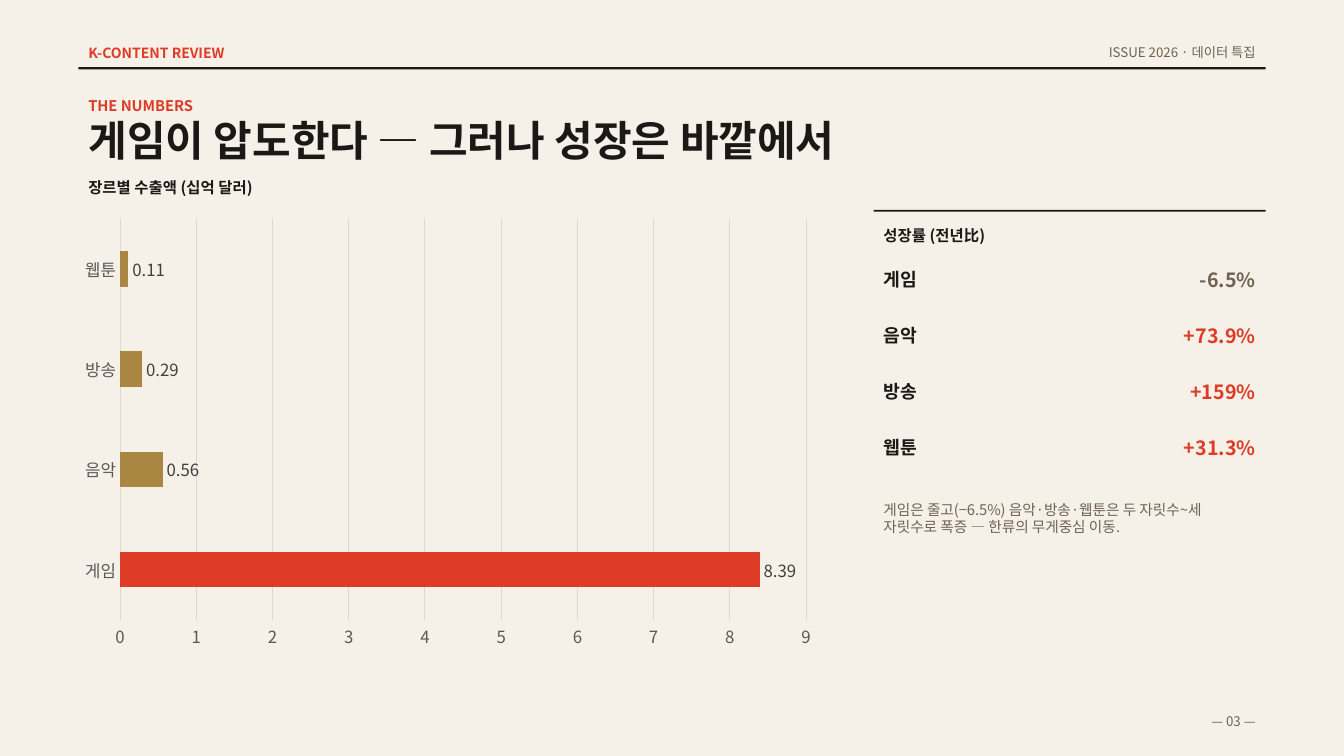
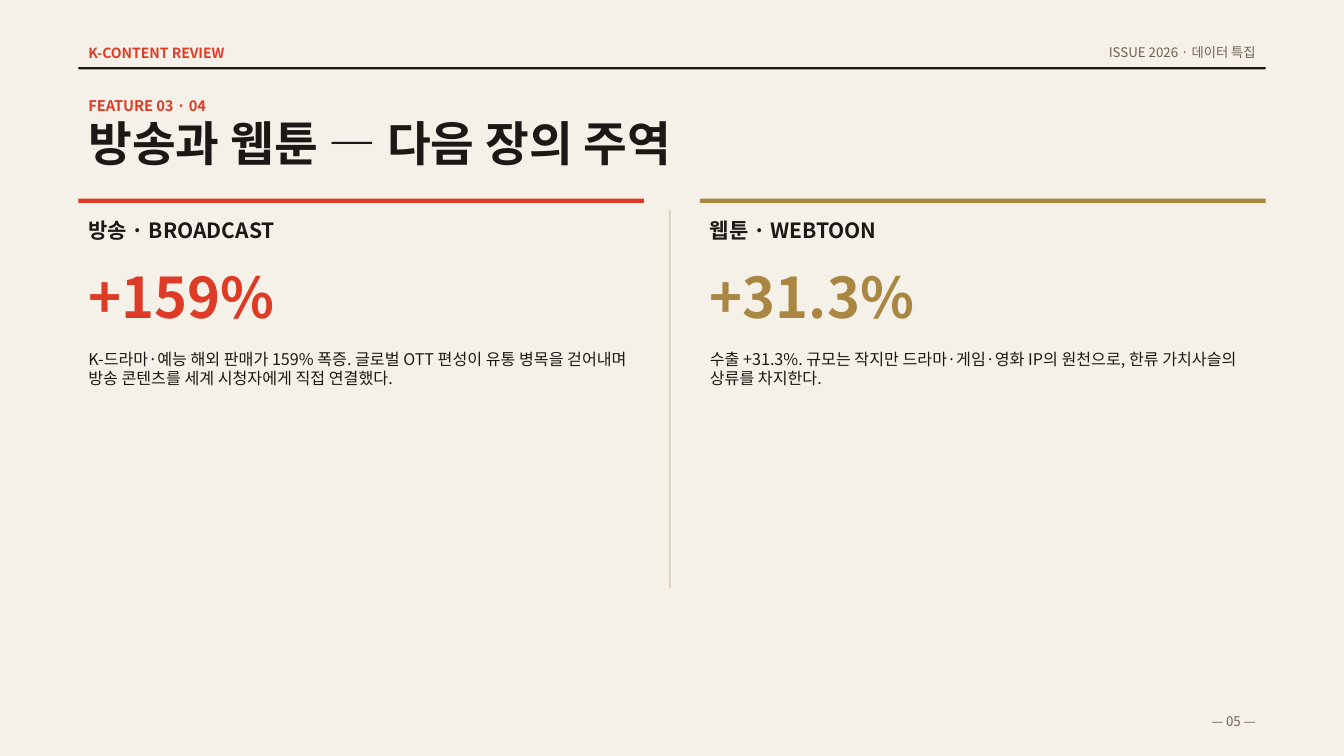
from dataclasses import dataclass

from pptx import Presentation
from pptx.chart.data import CategoryChartData
from pptx.dml.color import RGBColor
from pptx.enum import chart as charts, shapes, text
from pptx.oxml import ns
from pptx.util import Pt


@dataclass(frozen=True)
class Theme:
    """Colours, font and type sizes of the deck."""
    font: str = "Noto Sans CJK KR"
    paper: str = "F6F1E8"
    ink: str = "1C1815"
    red: str = "DE3B26"
    gold: str = "A98742"
    muted: str = "6F6253"
    divider: str = "D6CCBA"
    grid: str = "D9D9D9"
    axis: str = "595959"
    value: str = "404040"
    folio: float = 9.5
    brand: float = 10
    note: float = 10.5
    label: float = 11
    body: float = 11.5
    tick: float = 12
    genre: float = 13
    rate: float = 14
    heading: float = 15
    figure: float = 40


THEME = Theme()
LEFT, RIGHT = 56, 904
WIDTH = RIGHT - LEFT

BRAND = "K-CONTENT REVIEW"
ISSUE = "ISSUE 2026 · 데이터 특집"

NUMBERS = {
    "folio": "— 03 —",
    "kicker": ("THE NUMBERS", 90),
    "title": ("게임이 압도한다 — 그러나 성장은 바깥에서", 30, 44),
    "chart_label": "장르별 수출액 (십억 달러)",
    "exports": [("게임", 8.39, THEME.red), ("음악", 0.56, THEME.gold),
                ("방송", 0.29, THEME.gold), ("웹툰", 0.11, THEME.gold)],
    "growth_label": "성장률 (전년比)",
    "growth": [("게임", "-6.5%", THEME.muted, 56), ("음악", "+73.9%", THEME.red, 67),
               ("방송", "+159%", THEME.red, 63), ("웹툰", "+31.3%", THEME.red, 67)],
    "note": "게임은 줄고(−6.5%) 음악·방송·웹툰은 두 자릿수~세 자릿수로 폭증 — 한류의 무게중심 이동.",
}

FEATURES = {
    "folio": "— 05 —",
    "kicker": ("FEATURE 03 · 04", 98.5),
    "title": ("방송과 웹툰 — 다음 장의 주역", 34, 48),
    "columns": [
        ("방송 · BROADCAST", "+159%", 152.5, THEME.red,
         "K-드라마·예능 해외 판매가 159% 폭증. 글로벌 OTT 편성이 유통 병목을 "
         "걷어내며 방송 콘텐츠를 세계 시청자에게 직접 연결했다."),
        ("웹툰 · WEBTOON", "+31.3%", 164, THEME.gold,
         "수출 +31.3%. 규모는 작지만 드라마·게임·영화 IP의 원천으로, "
         "한류 가치사슬의 상류를 차지한다."),
    ],
}


def rgb(value):
    """Turn a hex string into a colour."""
    return RGBColor.from_string(value)


def set_font(font, size, color, bold=False):
    """Apply the deck's typeface with a size and a colour."""
    font.name, font.size, font.bold = THEME.font, Pt(size), bold
    font.color.rgb = rgb(color)


def write(box, words, size, color=THEME.ink, bold=False, right=False, wrap=True):
    """Fill a box with one formatted paragraph."""
    frame = box.text_frame
    frame.word_wrap = wrap
    frame.auto_size = text.MSO_AUTO_SIZE.SHAPE_TO_FIT_TEXT
    frame.vertical_anchor = text.MSO_ANCHOR.TOP
    para = frame.paragraphs[0]
    para.alignment = text.PP_ALIGN.RIGHT if right else text.PP_ALIGN.LEFT
    span = para.add_run()
    span.text = words
    set_font(span.font, size, color, bold)
    east_asian = span.font._element.makeelement(ns.qn("a:ea"), {"typeface": THEME.font})
    span.font._element.find(ns.qn("a:latin")).addnext(east_asian)


def add_text(page, words, left, top, width, height, **style):
    """Add a text box."""
    box = page.shapes.add_textbox(Pt(left), Pt(top), Pt(width), Pt(height))
    write(box, words, **style)


def add_bar(page, left, top, width, height, color):
    """Add a plain filled rectangle."""
    bar = page.shapes.add_shape(shapes.MSO_SHAPE.RECTANGLE,
                                Pt(left), Pt(top), Pt(width), Pt(height))
    bar.shadow.inherit = False
    bar.fill.solid()
    bar.fill.fore_color.rgb = rgb(color)
    bar.line.fill.background()


def add_page(deck, content):
    """Add a slide with the running header, folio, kicker and title."""
    page = deck.slides.add_slide(deck.slide_layouts[5])
    folio = dict(size=THEME.folio, color=THEME.muted, right=True, wrap=False)
    accent = dict(color=THEME.red, bold=True, wrap=False)
    add_text(page, BRAND, LEFT, 28, 114.5, 19.2, size=THEME.brand, **accent)
    add_text(page, ISSUE, RIGHT - 124, 28, 124, 18.6, **folio)
    add_bar(page, LEFT, 48, WIDTH, 1.5, THEME.ink)
    add_text(page, content["folio"], RIGHT - 51, 506, 51, 18.6, **folio)
    kicker, kicker_width = content["kicker"]
    add_text(page, kicker, LEFT, 66, kicker_width, 20, size=THEME.note, **accent)
    words, size, height = content["title"]
    title = page.shapes.title
    title.left, title.top, title.width, title.height = map(Pt, (LEFT, 78, WIDTH, height))
    write(title, words, size, bold=True)
    return page


def add_export_chart(page, exports):
    """Add the bar chart of exports by genre."""
    data = CategoryChartData()
    data.categories = [genre for genre, _, _ in exports]
    data.add_series("Series 1", [amount for _, amount, _ in exports])
    chart = page.shapes.add_chart(charts.XL_CHART_TYPE.BAR_CLUSTERED,
                                  Pt(50), Pt(150), Pt(540), Pt(320), data).chart
    chart.has_title = chart.has_legend = False
    chart.font.name, chart.font.size = THEME.font, Pt(10)

    for axis in (chart.category_axis, chart.value_axis):
        axis.major_tick_mark = axis.minor_tick_mark = charts.XL_TICK_MARK.NONE
        set_font(axis.tick_labels.font, THEME.tick, THEME.axis)
    values = chart.value_axis
    values.minimum_scale, values.maximum_scale, values.major_unit = 0, 9, 1
    values.format.line.fill.background()
    values.has_major_gridlines = True
    for line in (chart.category_axis.format.line, values.major_gridlines.format.line):
        line.color.rgb, line.width = rgb(THEME.grid), Pt(0.75)

    plot = chart.plots[0]
    plot.gap_width, plot.vary_by_categories = 182, False
    plot.has_data_labels = True
    labels = plot.data_labels
    labels.show_value = True
    labels.position = charts.XL_LABEL_POSITION.OUTSIDE_END
    set_font(labels.font, THEME.tick, THEME.value)
    series = plot.series[0]
    series.format.fill.solid()
    series.format.fill.fore_color.rgb = rgb(THEME.ink)
    for index, (_, _, color) in enumerate(exports):
        fill = series.points[index].format.fill
        fill.solid()
        fill.fore_color.rgb = rgb(color)


def build_numbers(deck):
    """Build the slide with the export chart and growth rates."""
    page = add_page(deck, NUMBERS)
    label = dict(size=THEME.label, bold=True)
    add_text(page, NUMBERS["chart_label"], LEFT, 124, 540, 20.6, **label)
    left, width = 624, RIGHT - 624
    add_bar(page, left, 150, width, 1.25, THEME.ink)
    add_text(page, NUMBERS["growth_label"], left, 158, width, 20.6, **label)
    for row, (genre, rate, color, rate_width) in enumerate(NUMBERS["growth"]):
        top = 188 + 40 * row
        add_text(page, genre, left, top, 210, 23, size=THEME.genre, bold=True)
        add_text(page, rate, RIGHT - rate_width, top, rate_width, 24.2, size=THEME.rate,
                 color=color, bold=True, right=True, wrap=False)
    add_text(page, NUMBERS["note"], left, 354, width, 32.6, size=THEME.note, color=THEME.muted)
    add_export_chart(page, NUMBERS["exports"])


def build_features(deck):
    """Build the slide that sets two genres side by side."""
    page = add_page(deck, FEATURES)
    gap = 40
    width = (WIDTH - gap) / 2
    for index, (heading, figure, figure_width, color, body) in enumerate(FEATURES["columns"]):
        left = LEFT + index * (width + gap)
        add_bar(page, left, 142, width, 3, color)
        add_text(page, heading, left, 152, width, 25.4, size=THEME.heading, bold=True)
        add_text(page, figure, left, 184, figure_width, 55.4, size=THEME.figure,
                 color=color, bold=True, wrap=False)
        add_text(page, body, left, 246, width, 35, size=THEME.body)
    add_bar(page, 478, 150, 1, 270, THEME.divider)


def main():
    """Build and save the deck."""
    deck = Presentation()
    deck.slide_width, deck.slide_height = Pt(960), Pt(540)
    background = deck.slide_master.background.fill
    background.solid()
    background.fore_color.rgb = rgb(THEME.paper)
    build_numbers(deck)
    build_features(deck)
    deck.save("out.pptx")


if __name__ == "__main__":
    main()
